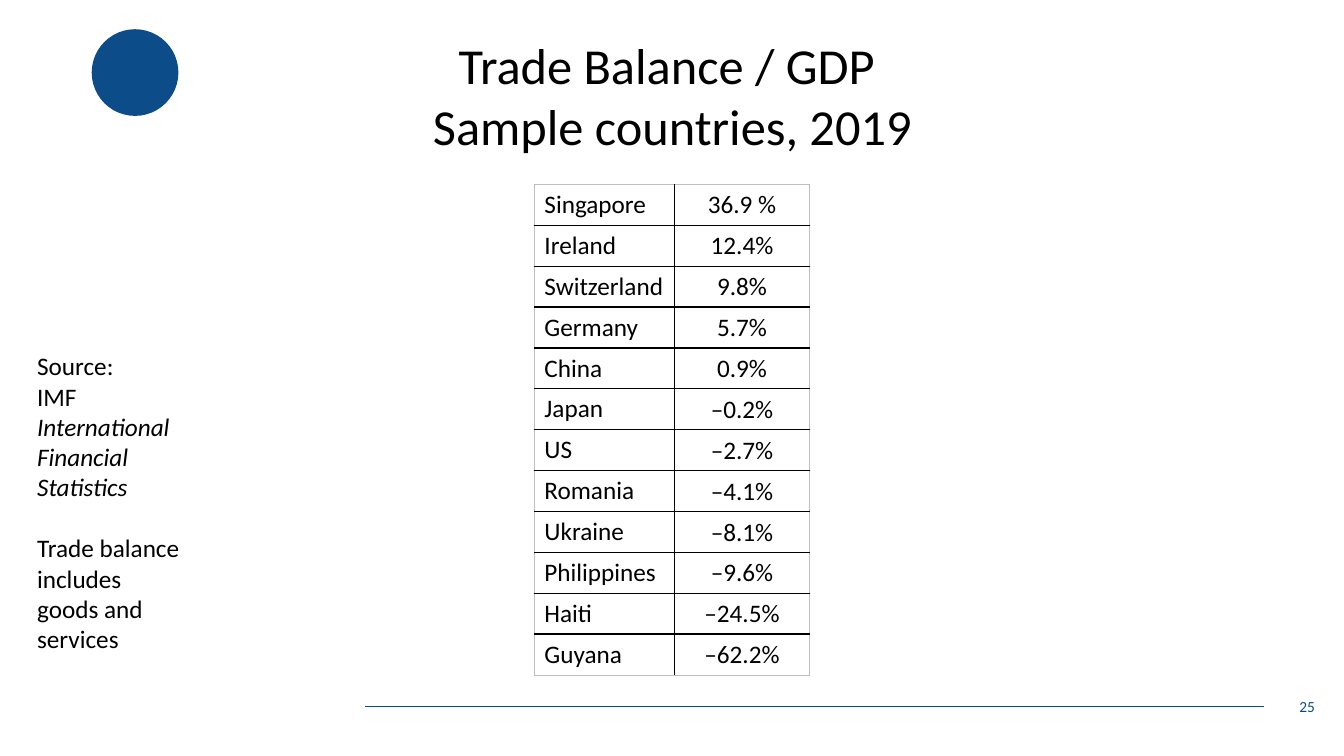
import pptx
import pptx.util
import pptx.dml.color
import pptx.enum.shapes
import pptx.enum.text
import pptx.oxml
import pptx.oxml.ns

Inches, Pt = pptx.util.Inches, pptx.util.Pt
ALIGN = pptx.enum.text.PP_ALIGN
ANCHOR = pptx.enum.text.MSO_ANCHOR
BLUE, BLACK, GRAY = "0C4C88", "000000", "BFBFBF"


def rgb(value):
    return pptx.dml.color.RGBColor.from_string(value)


def style(p, size, color=BLACK, align=ALIGN.LEFT):
    p.alignment = align
    for r in p.runs:
        r.font.name, r.font.size = "Calibri", Pt(size)
        r.font.color.rgb = rgb(color)


prs = pptx.Presentation()
prs.slide_width, prs.slide_height = Inches(13.33), Inches(7.5)
s = prs.slides.add_slide(prs.slide_layouts[6])

# Footer rule and corner disc
rule = s.shapes.add_connector(pptx.enum.shapes.MSO_CONNECTOR.STRAIGHT,
                              Inches(3.62), Inches(7.01), Inches(12.54), Inches(7.01))
rule.line.color.rgb = rgb(BLUE)
rule.line.width = Pt(0.5)
rule._element.spPr.append(pptx.oxml.parse_xml(
    f"<a:effectLst {pptx.oxml.ns.nsdecls('a')}/>"))

disc = s.shapes.add_shape(pptx.enum.shapes.MSO_SHAPE.OVAL,
                          Inches(0.91), Inches(0.29), Inches(0.86), Inches(0.86))
disc.shadow.inherit = False
disc.fill.solid()
disc.fill.fore_color.rgb = rgb(BLUE)
disc.line.fill.background()

# Slide number
tf = s.shapes.add_textbox(Inches(10.14), Inches(6.81), Inches(3), Inches(0.4)).text_frame
tf.word_wrap = True
tf.vertical_anchor = ANCHOR.MIDDLE
tf.text = "25"
style(tf.paragraphs[0], 11, BLUE, ALIGN.RIGHT)

# Title
tf = s.shapes.add_textbox(Inches(4.17), Inches(0.29), Inches(5), Inches(1.31)).text_frame
tf.word_wrap = False
tf.text = "Trade Balance / GDP \nSample countries, 2019"
for p in tf.paragraphs:
    style(p, 36, align=ALIGN.CENTER)

# Trade balance table
balances = [
    ("Singapore", "36.9 %"), ("Ireland", "12.4%"), ("Switzerland", "9.8%"),
    ("Germany", "5.7%"), ("China", "0.9%"), ("Japan", "–0.2%"),
    ("US", "–2.7%"), ("Romania", "–4.1%"), ("Ukraine", "–8.1%"),
    ("Philippines", "–9.6%"), ("Haiti", "–24.5%"), ("Guyana", "–62.2%"),
]
last = len(balances) - 1
table = s.shapes.add_table(len(balances), 2, Inches(5.3), Inches(1.83),
                           Inches(2.73), Inches(4.87)).table
table.first_row = table.horz_banding = False
table.columns[0].width, table.columns[1].width = Inches(1.39), Inches(1.34)
for row, entry in enumerate(balances):
    for col, text in enumerate(entry):
        cell = table.cell(row, col)
        cell.text = text
        style(cell.text_frame.paragraphs[0], 18,
              align=ALIGN.CENTER if col else ALIGN.LEFT)
        if col:
            cell.vertical_anchor = ANCHOR.MIDDLE
            if row > 1:
                cell.margin_left = cell.margin_right = cell.margin_top = Inches(0.01)
                cell.margin_bottom = 0
        cell.fill.background()
        outer = {"lnL": col == 0, "lnR": col == 1, "lnT": row == 0, "lnB": row == last}
        for i, (side, is_outer) in enumerate(outer.items()):
            width, color = (Pt(0.5), GRAY) if is_outer else (Pt(1), BLACK)
            cell._tc.get_or_add_tcPr().insert(i, pptx.oxml.parse_xml(
                f'<a:{side} {pptx.oxml.ns.nsdecls("a")} w="{width}"><a:solidFill>'
                f'<a:srgbClr val="{color}"/></a:solidFill></a:{side}>'))

# Source note
tf = s.shapes.add_textbox(Inches(0.27), Inches(3.43), Inches(1.63), Inches(3.13)).text_frame
tf.word_wrap = True
tf.text = "Source:\nIMF \nTrade balance includes goods and services"
r = tf.paragraphs[1].add_run()
r.text = "International Financial Statistics"
r.font.italic = True
for p in tf.paragraphs:
    style(p, 18)
tf.paragraphs[2].space_before = Pt(22)

prs.save("out.pptx")
